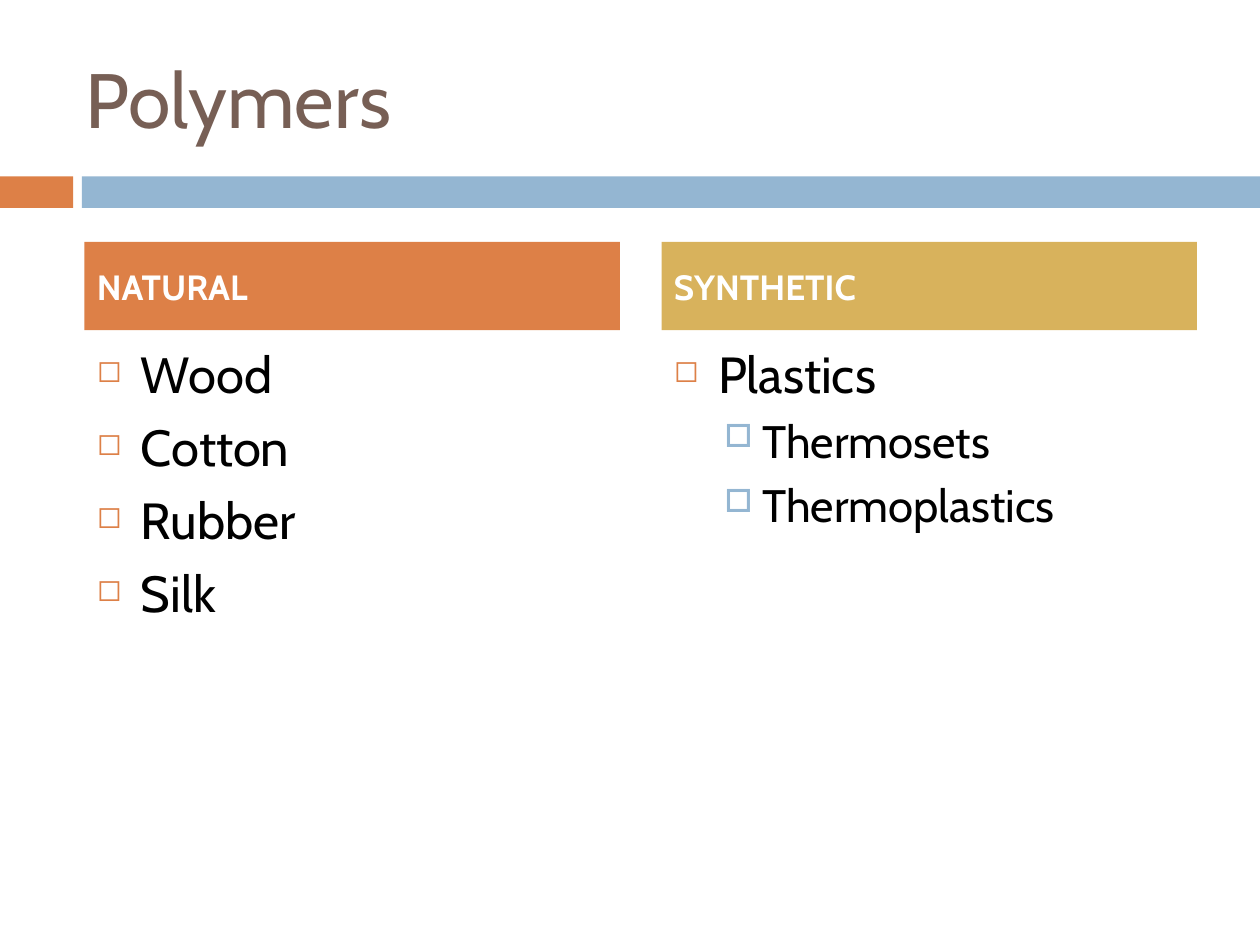
"""Build the Polymers slide comparing natural and synthetic materials."""
from lxml.etree import SubElement
from pptx import Presentation
from pptx.dml.color import RGBColor
from pptx.enum.shapes import MSO_SHAPE as Shape
from pptx.enum.text import MSO_ANCHOR as Anchor
from pptx.oxml.ns import qn
from pptx.util import Inches, Pt

TITLE = "Polymers"
ORANGE, BLUE, GOLD = "DD8047", "94B6D2", "D8B25C"
BROWN, BLACK, WHITE = "775F55", "000000", "FFFFFF"
COLUMNS = [
    ("NATURAL", ORANGE, [("Wood", 0), ("Cotton", 0), ("Rubber", 0), ("Silk", 0)]),
    ("SYNTHETIC", GOLD, [("Plastics", 0), ("Thermosets", 1), ("Thermoplastics", 1)]),
]
BANDS = [(0, 0.58, ORANGE), (0.65, 9.35, BLUE)]
LEVELS = [
    dict(size=29, before=7, indent=0.35, hang=0.35, bullet=("◻", ORANGE, 60)),
    dict(size=26, before=5.5, indent=0.7, hang=0.3, bullet=("□", BLUE, 70)),
]
LEFT, COLUMN_WIDTH, GAP = 0.67, 4.25, 0.33


def rgb(color):
    return RGBColor.from_string(color)


def add_block(slide, left, top, width, height, fill):
    block = slide.shapes.add_shape(
        Shape.RECTANGLE, Inches(left), Inches(top), Inches(width), Inches(height))
    block.shadow.inherit = False
    block.fill.solid()
    block.fill.fore_color.rgb = rgb(fill)
    block.line.fill.background()
    return block


def add_frame(slide, left, top, width, height, anchor=Anchor.TOP):
    frame = slide.shapes.add_textbox(
        Inches(left), Inches(top), Inches(width), Inches(height)).text_frame
    frame.word_wrap = True
    frame.vertical_anchor = anchor
    return frame


def write(paragraph, text, *, size, color=BLACK, bold=False, before=0,
          level=0, indent=0, hang=0, bullet=None):
    run = paragraph.add_run()
    run.text = text
    run.font.name = "Cabin"
    run.font.size = Pt(size)
    run.font.bold = bold
    run.font.color.rgb = rgb(color)
    paragraph.level = level
    paragraph.space_before = Pt(before)
    if bullet:
        char, bullet_color, percent = bullet
        props = paragraph._p.get_or_add_pPr()
        props.set("marL", str(Inches(indent)))
        props.set("indent", str(-Inches(hang)))
        SubElement(SubElement(props, qn("a:buClr")), qn("a:srgbClr"), val=bullet_color)
        SubElement(props, qn("a:buSzPct"), val=str(percent * 1000))
        SubElement(props, qn("a:buChar"), char=char)


def main():
    prs = Presentation()
    prs.slide_width, prs.slide_height = Inches(10), Inches(7.5)
    slide = prs.slides.add_slide(prs.slide_layouts[6])

    for left, width, color in BANDS:
        add_block(slide, left, 1.4, width, 0.25, color)
    title = add_frame(slide, 0.58, 0.3, 8.92, 0.95, Anchor.MIDDLE)
    write(title.paragraphs[0], TITLE, size=44, color=BROWN)

    for column, (heading, color, materials) in enumerate(COLUMNS):
        left = LEFT + column * (COLUMN_WIDTH + GAP)
        add_block(slide, left, 1.92, COLUMN_WIDTH, 0.7, color)
        label = add_frame(slide, left, 1.92, COLUMN_WIDTH, 0.7, Anchor.MIDDLE)
        write(label.paragraphs[0], heading, size=20, color=WHITE, bold=True, before=7)
        body = add_frame(slide, left, 2.67, COLUMN_WIDTH, 3.92)
        for row, (material, level) in enumerate(materials):
            paragraph = body.add_paragraph() if row else body.paragraphs[0]
            write(paragraph, material, level=level, **LEVELS[level])

    prs.save("out.pptx")


if __name__ == "__main__":
    main()
